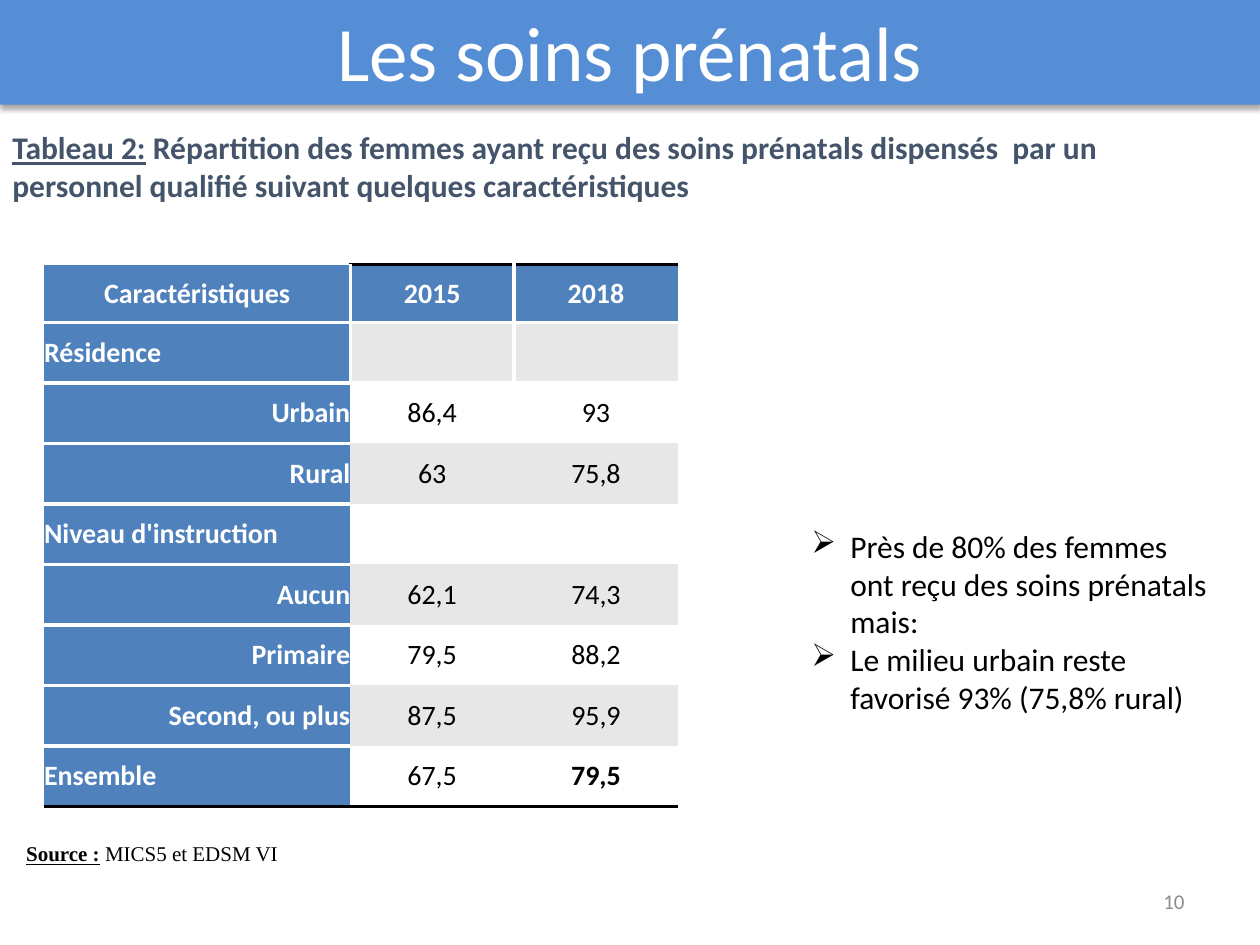
import pptx
import pptx.dml.color
import pptx.enum.text
import pptx.oxml
import pptx.oxml.ns
import pptx.util
from dataclasses import dataclass

Inches, Pt = pptx.util.Inches, pptx.util.Pt
ALIGN = pptx.enum.text.PP_ALIGN
MIDDLE = pptx.enum.text.MSO_ANCHOR.MIDDLE
NAMESPACE = pptx.oxml.ns.nsdecls("a")


@dataclass(frozen=True)
class Theme:
    font: str = "Calibri"
    source_font: str = "Times New Roman"
    white: str = "FFFFFF"
    black: str = "000000"
    banner: str = "558ED5"
    caption: str = "44546A"
    header: str = "4F81BD"
    band: str = "E7E7E7"
    muted: str = "8C8C8C"
    title_size: int = 44
    body_size: int = 18
    table_size: int = 16
    small_size: int = 12


theme = Theme()


def style(paragraph, size, color, bold=False, font=theme.font, align=ALIGN.LEFT):
    paragraph.alignment = align
    for span in paragraph.runs:
        span.font.name = font
        span.font.size = Pt(size)
        span.font.bold = bold
        span.font.color.rgb = pptx.dml.color.RGBColor.from_string(color)


def add_text(left, top, width, height, lines):
    box = page.shapes.add_textbox(Inches(left), Inches(top), Inches(width), Inches(height))
    box.text_frame.word_wrap = True
    box.text_frame.text = "\n".join(lines)
    return box.text_frame


deck = pptx.Presentation()
deck.slide_width, deck.slide_height = Inches(10), Inches(7.5)
page = deck.slides.add_slide(deck.slide_layouts[5])

# Title banner with a soft shadow
title = page.shapes.title
title.left, title.top, title.width, title.height = Inches(0), Inches(-0.02), Inches(10), Inches(0.85)
title.fill.solid()
title.fill.fore_color.rgb = pptx.dml.color.RGBColor.from_string(theme.banner)
title.text_frame.text = "Les soins prénatals"
title.text_frame.vertical_anchor = MIDDLE
style(title.text_frame.paragraphs[0], theme.title_size, theme.white, align=ALIGN.CENTER)
title._element.spPr.append(pptx.oxml.parse_xml(
    f'<a:effectLst {NAMESPACE}><a:outerShdw blurRad="{Pt(3.1)}" dist="{Pt(1.8)}" dir="5400000" '
    f'rotWithShape="0"><a:srgbClr val="{theme.black}"><a:alpha val="35000"/></a:srgbClr>'
    '</a:outerShdw></a:effectLst>'))

# Table caption
caption = add_text(0, 0.97, 9.76, 0.71, ["Tableau 2:"]).paragraphs[0]
caption.add_run().text = (" Répartition des femmes ayant reçu des soins prénatals dispensés  par un "
                          "personnel qualifié suivant quelques caractéristiques")
caption.space_after = Pt(10)
style(caption, theme.body_size, theme.caption, bold=True)
caption.runs[0].font.underline = True

# Findings
findings = add_text(6.34, 3.12, 3.39, 3.62, [
    "Près de 80% des femmes ont reçu des soins prénatals mais:",
    "Le milieu urbain reste favorisé 93% (75,8% rural)",
])
findings.vertical_anchor = MIDDLE
for para in findings.paragraphs:
    style(para, theme.body_size, theme.black)
    properties = para._p.get_or_add_pPr()
    properties.set("marL", str(Inches(0.31)))
    properties.set("indent", str(Inches(-0.31)))
    properties.append(pptx.oxml.parse_xml(f'<a:buChar {NAMESPACE} char="➢"/>'))

# Source line
source = add_text(0.11, 6.61, 5.07, 0.31, ["Source\u00a0:"]).paragraphs[0]
source.add_run().text = " MICS5 et EDSM VI"
source.line_spacing = 1.07
source.space_after = Pt(8)
style(source, theme.small_size, theme.black, font=theme.source_font, align=ALIGN.JUSTIFY)
source.runs[0].font.bold = source.runs[0].font.underline = True

# Page number
number = add_text(7.17, 6.95, 2.33, 0.4, ["10"])
number.vertical_anchor = MIDDLE
style(number.paragraphs[0], theme.small_size, theme.muted, align=ALIGN.RIGHT)

# Table of prenatal care by characteristic
rows = [
    ("Caractéristiques", "2015", "2018"),
    ("Résidence", "", ""),
    ("Urbain", "86,4", "93"),
    ("Rural", "63", "75,8"),
    ("Niveau d'instruction", "", ""),
    ("Aucun", "62,1", "74,3"),
    ("Primaire", "79,5", "88,2"),
    ("Second, ou plus", "87,5", "95,9"),
    ("Ensemble", "67,5", "79,5"),
]
group_rows = (1, 4, 8)
last = len(rows) - 1
table = page.shapes.add_table(len(rows), 3, Inches(0.35), Inches(2.1), Inches(5.04), Inches(4.33)).table
table.first_row = table.horz_banding = False
# "No Style, No Grid", so that only the borders set below show
table._tbl.tblPr.find(pptx.oxml.ns.qn("a:tableStyleId")).text = "{2D5ABB26-0587-4C30-8999-92F81FD0307C}"
for column, width in zip(table.columns, (2.43, 1.3, 1.3)):
    column.width = Inches(width)

thick_white, thin_white, black_rule = (theme.white, 2.25), (theme.white, 1), (theme.black, 2)
for r, row in enumerate(rows):
    table.rows[r].height = Inches(0.46 if r == 0 else 0.48)
    for c, text in enumerate(row):
        cell = table.cell(r, c)
        cell.margin_left = cell.margin_right = cell.margin_top = cell.margin_bottom = 0
        cell.vertical_anchor = MIDDLE
        is_header = r == 0 or c == 0

        # Borders, in the order left, right, top, bottom
        borders = {
            "lnL": thick_white if r < 2 and c > 0 else None,
            "lnR": thick_white if r < 2 and c < 2 else None,
            "lnT": (thin_white if c == 0 else black_rule) if r == 0
            else thick_white if c == 0 or r == 1 else None,
            "lnB": black_rule if r == last else thick_white if is_header else None,
        }
        for side, border in borders.items():
            if border:
                color, weight = border
                cell._tc.get_or_add_tcPr().append(pptx.oxml.parse_xml(
                    f'<a:{side} {NAMESPACE} w="{Pt(weight)}"><a:solidFill><a:srgbClr val="{color}"/>'
                    f'</a:solidFill></a:{side}>'))

        # Fill: blue headings, then alternating bands
        fill = theme.header if is_header else theme.band if r % 2 else theme.white
        cell.fill.solid()
        cell.fill.fore_color.rgb = pptx.dml.color.RGBColor.from_string(fill)

        # Group names on the left, their items on the right, figures centred
        cell.text_frame.text = text
        if r == 0 or c > 0:
            align = ALIGN.CENTER
        else:
            align = ALIGN.LEFT if r in group_rows else ALIGN.RIGHT
        style(cell.text_frame.paragraphs[0], theme.table_size,
              theme.white if is_header else theme.black,
              bold=is_header or (r == last and c == 2), align=align)

deck.save("out.pptx")
